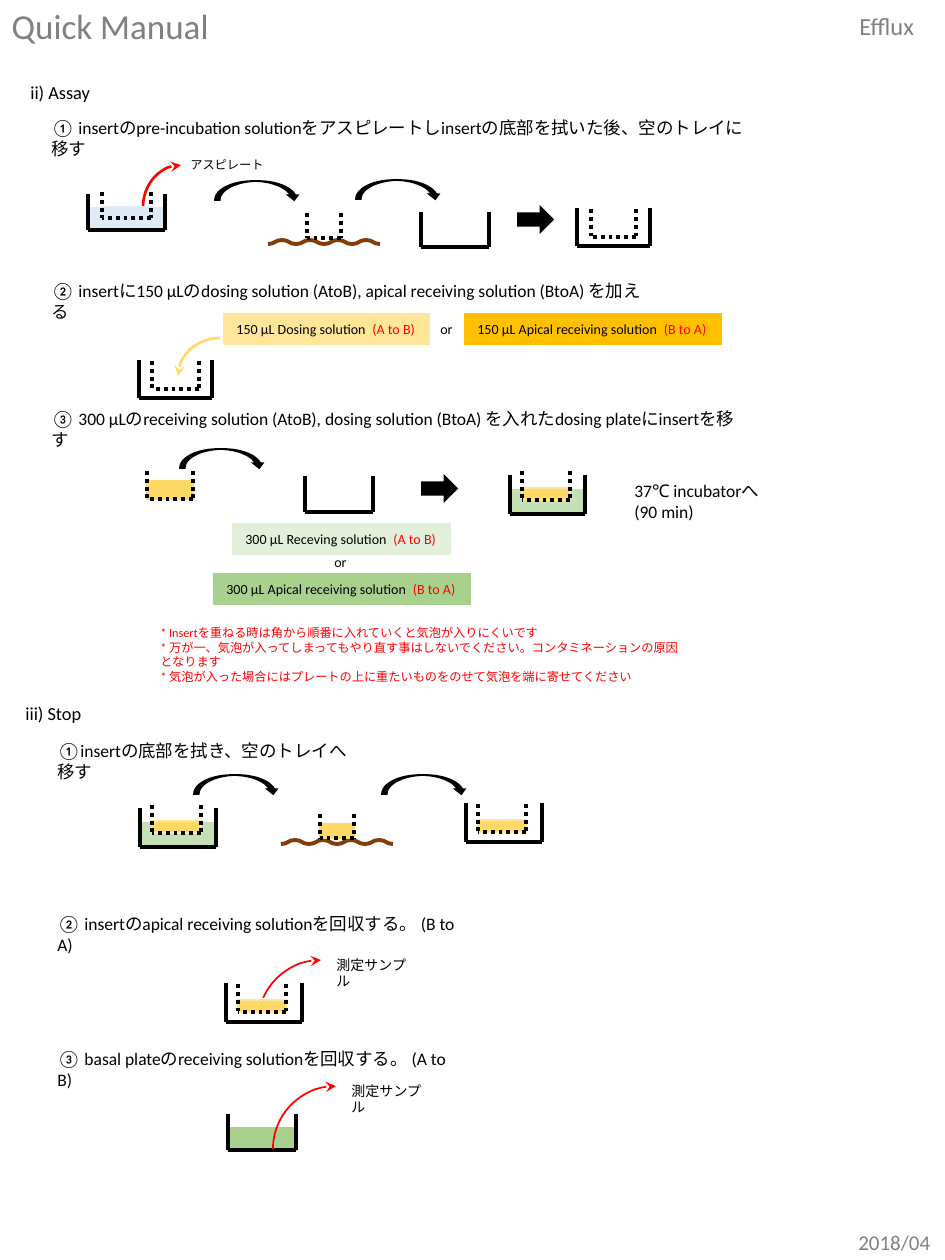
from lxml import etree
from pptx import Presentation
from pptx.dml.color import RGBColor
from pptx.enum.dml import MSO_LINE
from pptx.enum.shapes import MSO_CONNECTOR, MSO_SHAPE
from pptx.enum.text import MSO_ANCHOR, MSO_AUTO_SIZE, PP_ALIGN
from pptx.oxml.ns import qn
from pptx.util import Pt

SCALE = 914400 / 126
FONT = "Calibri"
RECT = MSO_SHAPE.RECTANGLE
ARC = MSO_SHAPE.ARC
HOP = MSO_SHAPE.CURVED_DOWN_ARROW
NEXT = MSO_SHAPE.RIGHT_ARROW
DOTS = MSO_LINE.ROUND_DOT
STRAIGHT = MSO_CONNECTOR.STRAIGHT
FIT = MSO_AUTO_SIZE.SHAPE_TO_FIT_TEXT
FIXED = MSO_AUTO_SIZE.NONE
TOP = MSO_ANCHOR.TOP
LEFT = PP_ALIGN.LEFT

BLACK = RGBColor(0, 0, 0)
WHITE = RGBColor(255, 255, 255)
GRAY = RGBColor(128, 128, 128)
RED = RGBColor(255, 0, 0)
BLUE = RGBColor(0xDE, 0xEB, 0xF7)
BROWN = RGBColor(0x84, 0x3C, 0x0B)
GOLD = RGBColor(0xFF, 0xD9, 0x66)
CREAM = RGBColor(0xFF, 0xE6, 0x99)
AMBER = RGBColor(0xFF, 0xC0, 0x00)
MINT = RGBColor(0xE2, 0xF0, 0xD9)
SAGE = RGBColor(0xC5, 0xE0, 0xB4)
GREEN = RGBColor(0xA9, 0xD1, 0x8E)


def px(*vals):
    return [round(val * SCALE) for val in vals]


def write(frame, lines, size, wrap, fit=FIT):
    frame.word_wrap = wrap
    frame.auto_size = fit
    frame.vertical_anchor = TOP
    for num, runs in enumerate(lines):
        para = frame.add_paragraph() if num else frame.paragraphs[0]
        para.alignment = LEFT
        for text, color in runs:
            run = para.add_run()
            run.text = text
            run.font.size = Pt(size)
            run.font.name = FONT
            run.font.color.rgb = color


def add_text(shapes, spot, size, lines, color=BLACK, wrap=False):
    box = shapes.add_textbox(*px(*spot))
    write(box.text_frame, [[(line, color)] for line in lines], size, wrap)


def add_shape(shapes, kind, spot, fill, edge=None, width=1):
    shape = shapes.add_shape(kind, *px(*spot))
    shape.shadow.inherit = False
    shape.fill.solid()
    shape.fill.fore_color.rgb = fill
    if edge is None:
        shape.line.fill.background()
    else:
        shape.line.color.rgb = edge
        shape.line.width = Pt(width)
        line = shape.element.spPr.find(qn("a:ln"))
        etree.SubElement(line, qn("a:miter"), lim="800000")
    return shape


def add_label(shapes, spot, fill, text, way):
    box = add_shape(shapes, RECT, spot, fill, fill, 0.75)
    runs = [(text, BLACK), (way, RED)]
    write(box.text_frame, [runs], 8, False)


def add_line(shapes, ends, dash):
    line = shapes.add_connector(STRAIGHT, *px(*ends))
    line.line.color.rgb = BLACK
    line.line.width = Pt(2.25)
    if dash:
        line.line.dash_style = dash
    etree.SubElement(line.element.spPr, qn("a:effectLst"))


def add_cup(shapes, spot, depth, fill=WHITE, edge=None, dash=None):
    x, y, w, h = spot
    end, base = x + w, y + h
    if depth:
        add_shape(shapes, RECT, (x, base - depth, w, depth), fill, edge)
    for ends in ((x, y, x, base), (end, y, end, base), (end, base, x, base)):
        add_line(shapes, ends, dash)


def add_well(shapes, tray, cup, depths, fills, edges):
    group = shapes.add_group_shape().shapes
    add_cup(group, tray, depths[0], fills[0], edges[0])
    add_cup(group, cup, depths[1], fills[1], edges[1], DOTS)


def bend(wave):
    last = None
    for dot in list(wave.element.iter(qn("a:pt"))):
        x, y = int(dot.get("x")), int(dot.get("y"))
        if last:
            step = dot.getparent()
            curve = etree.Element(qn("a:cubicBezTo"))
            mid = (last[0] + x) // 2
            for a, b in ((mid, last[1]), (mid, y), (x, y)):
                etree.SubElement(curve, qn("a:pt"), x=str(a), y=str(b))
            step.getparent().replace(step, curve)
        last = x, y


def add_towel(shapes, x, y, cup, fill, edge):
    group = shapes.add_group_shape().shapes
    dots = [px(x + 14 * num, y + 4 * (1 - num % 2)) for num in range(9)]
    pen = group.build_freeform(*dots[0])
    pen.add_line_segments(dots[1:], close=False)
    wave = pen.convert_to_shape()
    bend(wave)
    wave.shadow.inherit = False
    wave.fill.background()
    wave.line.color.rgb = BROWN
    wave.line.width = Pt(2.25)
    add_cup(group, cup, 14, fill, edge, DOTS)


def add_arc(shapes, spot, color, width, turn=270, flip=False):
    arc = add_shape(shapes, ARC, spot, color, color, width)
    arc.fill.background()
    arc.rotation = turn
    if flip:
        arc.element.spPr.find(qn("a:xfrm")).set("flipV", "1")
    line = arc.element.spPr.find(qn("a:ln"))
    etree.SubElement(line, qn("a:tailEnd"), type="stealth")


def add_title(slide):
    title = slide.shapes.title
    title.left, title.top, title.width, title.height = px(-1, -2, 224, 55)
    write(title.text_frame, [[("Quick Manual", GRAY)]], 20, False, FIXED)


def add_heads(shapes):
    add_text(shapes, (847, 5, 81, 43), 14, ["Efflux"], GRAY)
    add_text(shapes, (846, 1223, 98, 38), 12, ["2018/04"], GRAY)
    add_text(shapes, (18, 75, 86, 35), 10.5, ["ii) Assay"])
    add_text(shapes, (13, 696, 82, 35), 10.5, ["iii) Stop"])
    steps = (
        (39, 111, 718, "① insertのpre-incubation solutionをアスピレートしinsertの底部を拭いた後、空のトレイに移す"),
        (39, 274, 627, "② insertに150 μLのdosing solution (AtoB), apical receiving solution (BtoA) を加える"),
        (39, 402, 722, "③ 300 μLのreceiving solution (AtoB), dosing solution (BtoA) を入れたdosing plateにinsertを移す"),
        (45, 734, 325, "①insertの底部を拭き、空のトレイへ移す"),
        (45, 907, 430, "② insertのapical receiving solutionを回収する。 (B to A)"),
        (45, 1042, 421, "③ basal plateのreceiving solutionを回収する。 (A to B)"),
    )
    for x, y, w, text in steps:
        add_text(shapes, (x, y, w, 34), 10, [text], wrap=True)


def add_assay(shapes):
    whites, bare = (WHITE, WHITE), (None, None)
    add_arc(shapes, (139, 169, 84, 76), RED, 1.5)
    add_well(shapes, (88, 194, 77, 36), (102, 192, 49, 26), (22, 11),
             (BLUE, BLUE), (BLUE, BLUE))
    add_text(shapes, (178, 151, 108, 28), 7, ["アスピレート"], wrap=True)
    add_towel(shapes, 268, 240, (307, 213, 34, 25), WHITE, None)
    add_cup(shapes.add_group_shape().shapes, (421, 212, 68, 35), 0)
    add_well(shapes, (577, 208, 73, 38), (591, 209, 45, 28), (23, 18),
             whites, bare)

    add_well(shapes, (139, 360, 73, 38), (152, 361, 47, 28), (23, 18),
             whites, bare)
    add_arc(shapes, (178, 338, 84, 76), GOLD, 1.5, 180, True)
    add_label(shapes, (224, 314, 205, 30), CREAM, "150 μL Dosing solution  ", "(A to B)")
    add_label(shapes, (465, 314, 256, 30), AMBER, "150 μL Apical receiving solution  ", "(B to A)")
    add_text(shapes, (428, 314, 38, 30), 8, ["or"])

    add_cup(shapes.add_group_shape().shapes, (147, 471, 46, 28), 18,
            GOLD, GOLD, DOTS)
    add_cup(shapes.add_group_shape().shapes, (305, 476, 68, 36), 22)
    add_well(shapes, (510, 475, 75, 39), (522, 471, 48, 29), (24, 12),
             (SAGE, GOLD), (SAGE, CREAM))
    add_text(shapes, (622, 474, 153, 55), 10, ["37℃ incubatorへ", "(90 min)"], wrap=True)
    add_label(shapes, (233, 524, 217, 30), MINT, "300 μL Receving solution  ", "(A to B)")
    add_label(shapes, (214, 574, 256, 30), GREEN, "300 μL Apical receiving solution  ", "(B to A)")
    add_text(shapes, (322, 547, 38, 30), 8, ["or"])
    notes = (
        "* Insertを重ねる時は角から順番に入れていくと気泡が入りにくいです",
        "* 万が一、気泡が入ってしまってもやり直す事はしないでください。コンタミネーションの原因となります",
        "* 気泡が入った場合にはプレートの上に重たいものをのせて気泡を端に寄せてください",
    )
    add_text(shapes, (148, 619, 554, 57), 7, notes, RED, True)


def add_stop(shapes):
    fills, edges = (SAGE, GOLD), (SAGE, CREAM)
    add_well(shapes, (140, 808, 76, 39), (152, 805, 49, 28), (24, 12),
             fills, edges)
    add_towel(shapes, 281, 840, (320, 814, 34, 24), GOLD, GOLD)
    add_cup(shapes.add_group_shape().shapes, (228, 1114, 68, 36), 22,
            GREEN, GREEN)
    for x, y in ((258, 960), (273, 1086)):
        add_arc(shapes, (x, y, 126, 126), RED, 1)
        add_text(shapes, (x + 66, y - 10, 107, 30), 8, ["測定サンプル"], wrap=True)
    for x, y in ((466, 803), (226, 983)):
        add_well(shapes, (x, y, 76, 39), (x + 12, y + 1, 48, 28), (24, 12),
                 (WHITE, GOLD), (None, CREAM))


def add_moves(shapes):
    for x, y in ((215, 181), (356, 180), (180, 449), (194, 775), (382, 775)):
        add_shape(shapes, HOP, (x, y, 84, 19), BLACK, BLACK)
    for x, y in ((518, 207), (422, 476)):
        add_shape(shapes, NEXT, (x, y, 35, 25), BLACK, BLACK)


def main():
    deck = Presentation()
    deck.slide_width, deck.slide_height = px(945, 1260)
    slide = deck.slides.add_slide(deck.slide_layouts[5])
    add_title(slide)
    add_heads(slide.shapes)
    add_assay(slide.shapes)
    add_stop(slide.shapes)
    add_moves(slide.shapes)
    deck.save("out.pptx")


if __name__ == "__main__":
    main()
